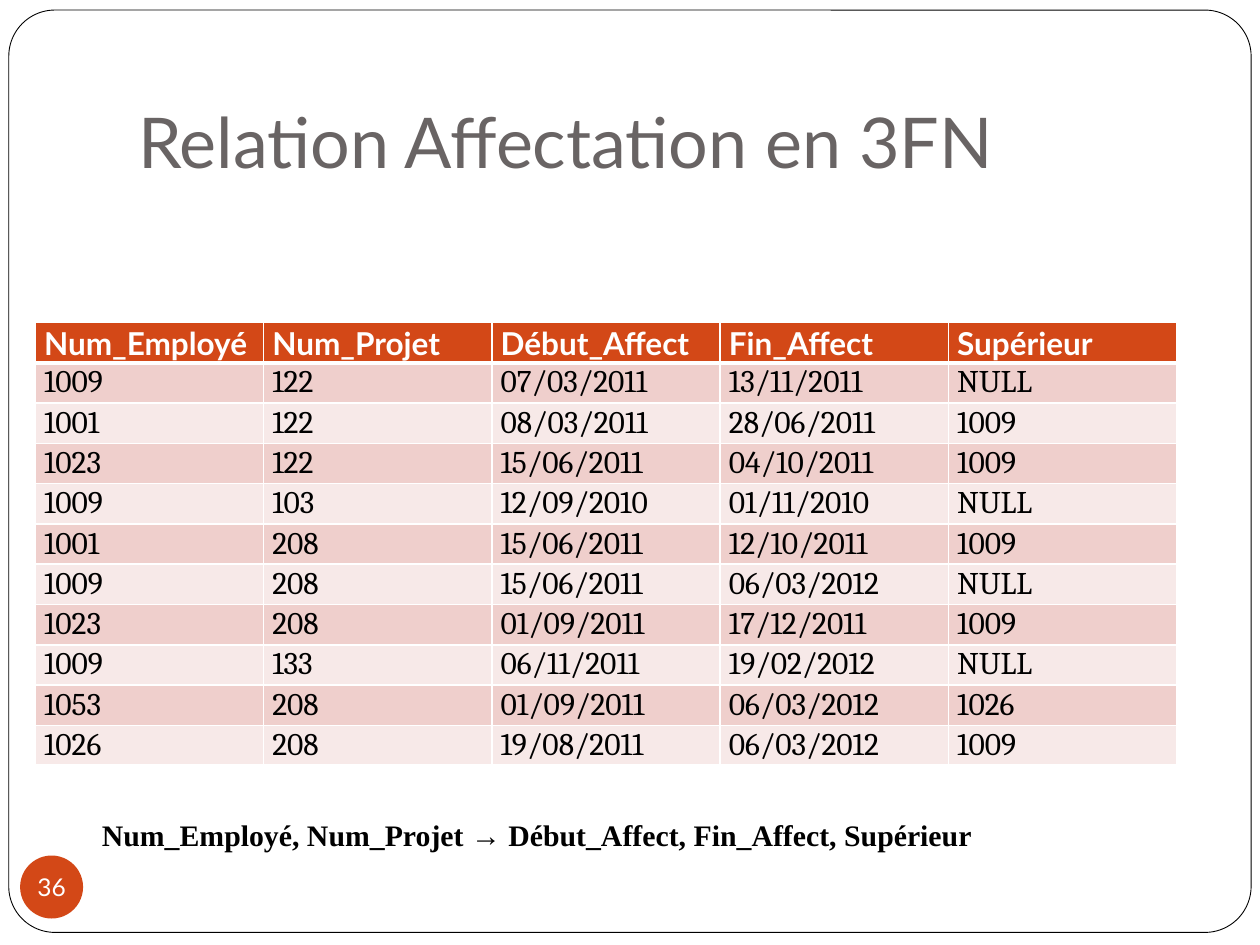
from lxml.etree import SubElement
from pptx import Presentation
from pptx.dml.color import RGBColor
from pptx.enum.shapes import MSO_SHAPE
from pptx.enum.text import MSO_ANCHOR, PP_ALIGN
from pptx.oxml.ns import qn
from pptx.util import Inches, Pt

ACCENT, WHITE, BLACK = "D34817", "FFFFFF", "000000"
BANDS = ("EFCFCC", "F7E9E8")
ROWS = [
    ("Num_Employé", "Num_Projet", "Début_Affect", "Fin_Affect", "Supérieur"),
    ("1009", "122", "07/03/2011", "13/11/2011", "NULL"),
    ("1001", "122", "08/03/2011", "28/06/2011", "1009"),
    ("1023", "122", "15/06/2011", "04/10/2011", "1009"),
    ("1009", "103", "12/09/2010", "01/11/2010", "NULL"),
    ("1001", "208", "15/06/2011", "12/10/2011", "1009"),
    ("1009", "208", "15/06/2011", "06/03/2012", "NULL"),
    ("1023", "208", "01/09/2011", "17/12/2011", "1009"),
    ("1009", "133", "06/11/2011", "19/02/2012", "NULL"),
    ("1053", "208", "01/09/2011", "06/03/2012", "1026"),
    ("1026", "208", "19/08/2011", "06/03/2012", "1009"),
]


def rgb(color):
    """Turn a hex string into a colour."""
    return RGBColor.from_string(color)


def write(tf, text, font, size, color, bold=False):
    """Write one paragraph in a single style and return it."""
    p = tf.paragraphs[0]
    p.text = text
    p.font.name, p.font.size, p.font.bold = font, Pt(size), bold
    p.font.color.rgb = rgb(color)
    return p


def add_box(s, kind, box, fill):
    """Add a filled preset shape without shadow or outline."""
    sp = s.shapes.add_shape(kind, *map(Inches, box))
    sp.shadow.inherit = False
    sp.fill.solid()
    sp.fill.fore_color.rgb = rgb(fill)
    sp.line.fill.background()
    return sp


def add_frame(s, box):
    """Add the rounded outline around the slide."""
    sp = add_box(s, MSO_SHAPE.ROUNDED_RECTANGLE, box, WHITE)
    sp.adjustments[0] = 0.05
    sp.line.fill.solid()
    sp.line.fill.fore_color.rgb = rgb(BLACK)
    sp.line.width = Pt(0.5)


def add_title(s, box, text):
    """Add the title, resting on the bottom of its box."""
    tf = s.shapes.add_textbox(*map(Inches, box)).text_frame
    tf.word_wrap = True
    tf.vertical_anchor = MSO_ANCHOR.BOTTOM
    tf.margin_bottom = Inches(0.1)
    write(tf, text, "Lato", 40, "696464")


def add_page_number(s, box, text):
    """Add the page number in its disc."""
    tf = add_box(s, MSO_SHAPE.OVAL, box, ACCENT).text_frame
    tf.margin_left = tf.margin_right = tf.margin_top = tf.margin_bottom = 0
    tf.word_wrap = False
    tf.vertical_anchor = MSO_ANCHOR.MIDDLE
    write(tf, text, "Lato", 14, WHITE).alignment = PP_ALIGN.CENTER


def add_borders(cell, top, bottom):
    """Draw white cell borders, one point wide at the sides."""
    tc_pr = cell._tc.get_or_add_tcPr()
    for side, width in (("L", 1), ("R", 1), ("T", top), ("B", bottom)):
        ln = SubElement(tc_pr, qn(f"a:ln{side}"), w=str(Pt(width)))
        SubElement(SubElement(ln, qn("a:solidFill")), qn("a:srgbClr"), val=WHITE)


def fill_cell(cell, text, row):
    """Style one cell according to its row."""
    header = row == 0
    add_borders(cell, 3 if row == 1 else 1, 3 if header else 1)
    cell.fill.solid()
    cell.fill.fore_color.rgb = rgb(ACCENT if header else BANDS[(row - 1) % 2])
    cell.margin_left = cell.margin_right = Inches(0.07)
    cell.margin_top = cell.margin_bottom = 0
    font, color = ("Lato", WHITE) if header else ("Cambria", BLACK)
    write(cell.text_frame, text, font, 18, color, header).line_spacing = 1.05


def add_relation(s, box, rows):
    """Add the relation as a banded table."""
    table = s.shapes.add_table(len(rows), len(rows[0]), *map(Inches, box)).table
    for row in table.rows:
        row.height = Inches(0.32)
    table.rows[len(rows) - 1].height = Inches(0.3)
    for i, values in enumerate(rows):
        for j, text in enumerate(values):
            fill_cell(table.cell(i, j), text, i)


def add_dependency(s, box, text):
    """Add the functional dependency below the table."""
    tf = s.shapes.add_textbox(*map(Inches, box)).text_frame
    tf.word_wrap = True
    write(tf, text, "Times New Roman", 17, BLACK, True)


def main():
    """Build and save the slide."""
    prs = Presentation()
    prs.slide_width, prs.slide_height = Inches(10), Inches(7.5)
    s = prs.slides.add_slide(prs.slide_layouts[6])
    add_frame(s, (0.07, 0.08, 9.86, 7.32))
    add_title(s, (1, 0.3, 8.5, 1.25), "Relation Affectation en 3FN")
    add_page_number(s, (0.16, 6.79, 0.5, 0.5), "36")
    add_relation(s, (0.28, 2.56, 9.06, 3.48), ROWS)
    add_dependency(s, (0.71, 6.43, 7.76, 0.39),
                   "Num_Employé, Num_Projet → Début_Affect, Fin_Affect, Supérieur")
    prs.save("out.pptx")


if __name__ == "__main__":
    main()
